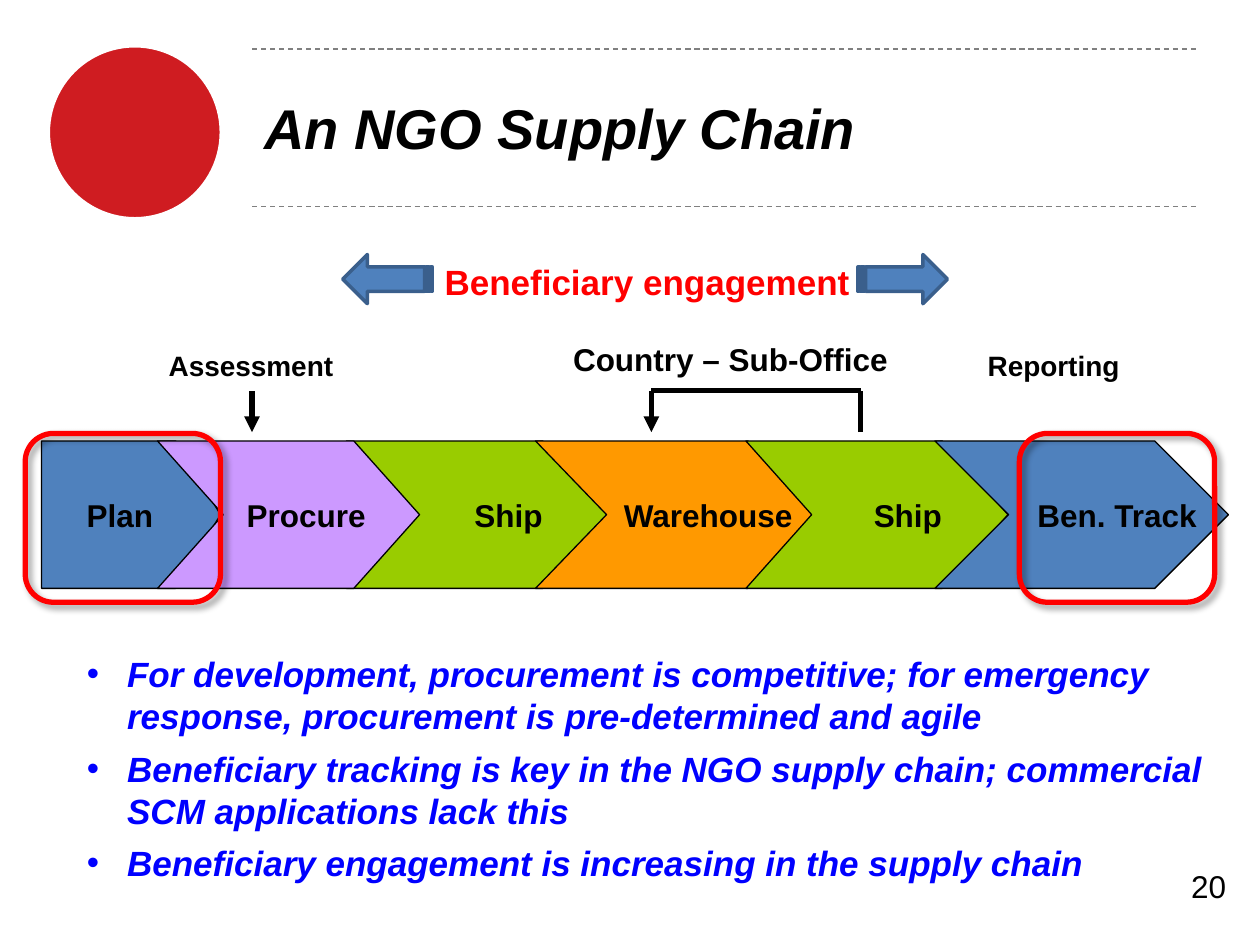
from lxml.etree import SubElement
from pptx import Presentation
from pptx.dml.color import RGBColor
from pptx.enum.dml import MSO_LINE
from pptx.enum.shapes import MSO_CONNECTOR, MSO_SHAPE as SHAPE
from pptx.enum.text import MSO_ANCHOR as ANCHOR, PP_ALIGN as ALIGN
from pptx.oxml.ns import qn
from pptx.util import Inches, Pt

hex_color = RGBColor.from_string


def add_shape(kind, box, fill, line, width):
    sp = s.shapes.add_shape(kind, *map(Inches, box))
    sp.shadow.inherit = False
    if fill:
        sp.fill.solid()
        sp.fill.fore_color.rgb = hex_color(fill)
    else:
        sp.fill.background()
    sp.line.color.rgb = hex_color(line)
    sp.line.width = Pt(width)
    return sp


def write(sp, lines, size, color="000000", align=ALIGN.LEFT, wrap=False, anchor=ANCHOR.TOP, **extra):
    tf = sp.text_frame
    tf.word_wrap = wrap
    tf.vertical_anchor = anchor
    fmt = {"name": "Arial", "size": Pt(size), "bold": True, **extra}
    for i, line in enumerate(lines):
        p = tf.add_paragraph() if i else tf.paragraphs[0]
        p.alignment = align
        r = p.add_run()
        r.text = line
        r.font.color.rgb = hex_color(color)
        for key, value in fmt.items():
            setattr(r.font, key, value)
    return tf


prs = Presentation()
prs.slide_width, prs.slide_height = Inches(10), Inches(7.5)
s = prs.slides.add_slide(prs.slide_layouts[6])

add_shape(SHAPE.OVAL, (0.38, 0.36, 1.38, 1.38), "CF1C21", "FFFFFF", 2.5)

stages = [
    (SHAPE.PENTAGON, "Plan", 0.33, 1.42, 0.304, "4F81BD", 0),
    (SHAPE.CHEVRON, "Ship", 2.75, 2.08, 0.446, "99CC00", 0.49),
    (SHAPE.CHEVRON, "Warehouse", 4.25, 2.25, 0.482, "FF9900", 0.49),
    (SHAPE.CHEVRON, "Ship", 5.92, 2.08, 0.446, "99CC00", 0.49),
    (SHAPE.CHEVRON, "Ben. Track", 7.42, 2.33, 0.5, "4F81BD", 0.56),
    (SHAPE.CHEVRON, "Procure", 1.25, 2.08, 0.446, "CC99FF", 0.28),
]
for kind, label, left, width, point, fill, shift in stages:
    sp = add_shape(kind, (left, 3.5, width, 1.17), fill, "000000", 0.75)
    sp.adjustments[0] = point
    tf = write(sp, [label], 18, align=ALIGN.CENTER, anchor=ANCHOR.MIDDLE)
    tf.margin_left = Inches(0.1 + shift)

lines = [
    (2, 0.39, 9.5, 0.39, "808080", 0.75, False),
    (2, 1.64, 9.5, 1.64, "808080", 0.75, False),
    (6.83, 3.43, 6.83, 3.1, "000000", 3, False),
    (6.83, 3.1, 5.17, 3.1, "000000", 3, False),
    (5.17, 3.43, 5.17, 3.1, "000000", 3, True),
    (2, 3.43, 2, 3.1, "000000", 3, True),
]
for x1, y1, x2, y2, color, width, arrow in lines:
    sp = s.shapes.add_connector(MSO_CONNECTOR.STRAIGHT, *map(Inches, (x1, y1, x2, y2)))
    sp.line.color.rgb = hex_color(color)
    sp.line.width = Pt(width)
    if color == "808080":
        sp.line.dash_style = MSO_LINE.DASH
    if arrow:
        SubElement(sp.line._get_or_add_ln(), qn("a:headEnd"), type="triangle")
    SubElement(sp._element.spPr, qn("a:effectLst"))

bullets = [
    "For development, procurement is competitive; for emergency response, procurement is pre-determined and agile",
    "Beneficiary tracking is key in the NGO supply chain; commercial SCM applications lack this",
    "Beneficiary engagement is increasing in the supply chain",
]
texts = [
    ((2, 0.38, 7.5, 1.25), ["An NGO Supply Chain"],
     {"size": 32, "italic": True, "wrap": True, "anchor": ANCHOR.MIDDLE}),
    ((4.45, 2.65, 2.73, 0.4), ["Country – Sub-Office"], {"size": 18}),
    ((1.24, 2.72, 1.51, 0.37), ["Assessment"], {"size": 16}),
    ((7.74, 2.72, 1.25, 0.37), ["Reporting"], {"size": 16}),
    ((3.43, 2.02, 3.44, 0.44), ["Beneficiary engagement"], {"size": 20, "color": "FF0000"}),
    ((8.5, 6.83, 1.33, 0.52), ["20"], {"size": 18, "bold": False, "align": ALIGN.RIGHT, "wrap": True}),
    ((0.59, 5.13, 9.19, 2.32), bullets, {"size": 20, "color": "0000FF", "italic": True, "wrap": True}),
]
for box, content, fmt in texts:
    tf = write(s.shapes.add_textbox(*map(Inches, box)), content, **fmt)

for p in tf.paragraphs:
    p.space_before = Pt(6)
    pPr = p._p.get_or_add_pPr()
    pPr.set("marL", str(Inches(0.32)))
    pPr.set("indent", str(Inches(-0.32)))
    SubElement(pPr, qn("a:buFont"), typeface="Arial")
    SubElement(pPr, qn("a:buChar"), char="•")

for left, rotation in ((6.81, 0), (2.72, 180)):
    sp = add_shape(SHAPE.STRIPED_RIGHT_ARROW, (left, 2.02, 0.71, 0.39), "4F81BD", "3A5F8C", 2)
    sp.rotation = rotation

for left in (0.2, 8.09):
    sp = add_shape(SHAPE.ROUNDED_RECTANGLE, (left, 3.44, 1.55, 1.34), None, "FF0000", 3)
    effects = sp._element.spPr.find(qn("a:effectLst"))
    shadow = SubElement(effects, qn("a:outerShdw"), blurRad=str(Pt(4)), dist=str(Pt(3)),
                        dir=str(45 * 60000), algn="tl", rotWithShape="0")
    black = SubElement(shadow, qn("a:srgbClr"), val="000000")
    SubElement(black, qn("a:alpha"), val="40000")

prs.save("out.pptx")
